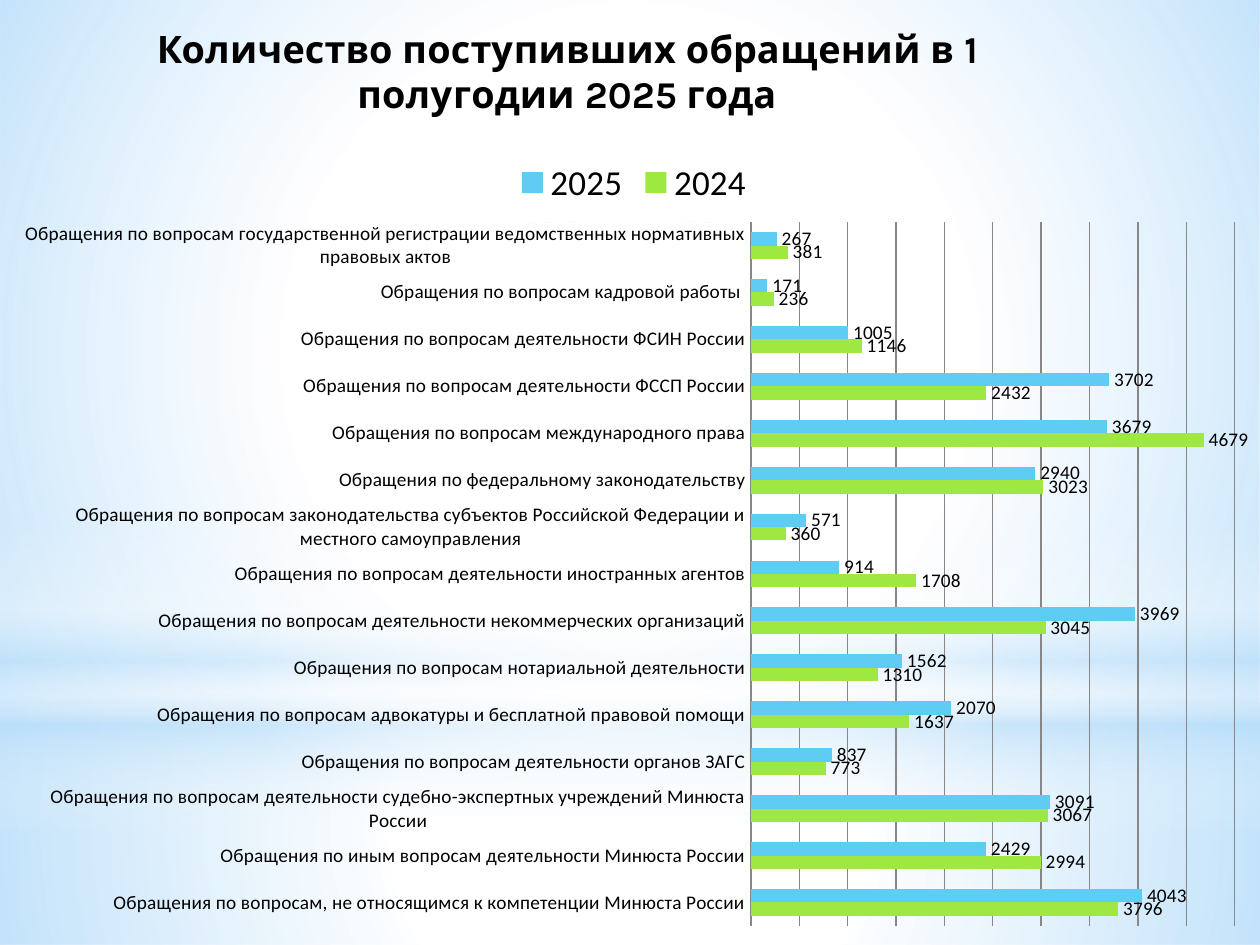
from lxml import etree
from pptx import Presentation
from pptx.chart.data import CategoryChartData as ChartData
from pptx.dml.color import RGBColor as Rgb
from pptx.enum.chart import XL_CHART_TYPE as ChartType
from pptx.enum.chart import XL_LABEL_POSITION as LabelPos
from pptx.enum.chart import XL_LEGEND_POSITION as LegendPos
from pptx.enum.chart import XL_TICK_MARK as TickMark
from pptx.enum.shapes import MSO_SHAPE as Shape
from pptx.oxml import parse_xml
from pptx.oxml.ns import nsdecls, qn
from pptx.util import Emu, Pt

SCALE = 914400 / 126
WIDTH, HEIGHT = 1260, 945
COLORS = {"white": "FFFFFF", "sky": "B4DCFA", "black": "000000",
          "grid": "878787", "2024": "9FE842", "2025": "5ECCF3"}
TITLE = "Количество поступивших обращений в 1 полугодии 2025 года"
YEARS = ("2024", "2025")
APPEALS = [
    ("Обращения по вопросам, не относящимся к компетенции Минюста России", 3796, 4043),
    ("Обращения по иным вопросам деятельности Минюста России", 2994, 2429),
    ("Обращения по вопросам деятельности судебно-экспертных учреждений Минюста России", 3067, 3091),
    ("Обращения по вопросам деятельности органов ЗАГС", 773, 837),
    ("Обращения по вопросам адвокатуры и бесплатной правовой помощи", 1637, 2070),
    ("Обращения по вопросам нотариальной деятельности", 1310, 1562),
    ("Обращения по вопросам деятельности некоммерческих организаций", 3045, 3969),
    ("Обращения по вопросам деятельности иностранных агентов", 1708, 914),
    ("Обращения по вопросам законодательства субъектов Российской Федерации "
     "и местного самоуправления", 360, 571),
    ("Обращения по федеральному законодательству", 3023, 2940),
    ("Обращения по вопросам международного права", 4679, 3679),
    ("Обращения по вопросам деятельности ФССП России", 2432, 3702),
    ("Обращения по вопросам деятельности ФСИН России", 1146, 1005),
    ("Обращения по вопросам кадровой работы ", 236, 171),
    ("Обращения по вопросам государственной регистрации ведомственных "
     "нормативных правовых актов", 381, 267),
]


def px(length):
    return Emu(round(length * SCALE))


def color(name):
    return Rgb.from_string(COLORS[name])


def style_font(font, size, name="Calibri", bold=False):
    font.size, font.name, font.bold = Pt(size), name, bold
    font.color.rgb = color("black")


def write(frame, text, **style):
    span = frame.paragraphs[0].add_run()
    span.text = text
    style_font(span.font, **style)


def place(parent, x, y, width=None, height=None):
    for old in parent.findall(qn("c:layout")):
        parent.remove(old)
    values = [("xMode", "edge"), ("yMode", "edge"),
              ("x", round(x / WIDTH, 3)), ("y", round(y / HEIGHT, 3))]
    if width:
        values.insert(0, ("layoutTarget", "inner"))
        values += [("w", round(width / WIDTH, 3)), ("h", round(height / HEIGHT, 3))]
    layout = parse_xml(f"<c:layout {nsdecls('c')}><c:manualLayout/></c:layout>")
    for tag, value in values:
        etree.SubElement(layout[0], qn(f"c:{tag}")).set("val", str(value))
    return layout


class SlideBuilder:
    def __init__(self, deck):
        self.page = deck.slides.add_slide(deck.slide_layouts[6])
        self.page.background.fill.solid()
        self.page.background.fill.fore_color.rgb = color("white")

    def glow(self, kind, x, y, width, height, stops, angle=None):
        shape = self.page.shapes.add_shape(kind, px(x), px(y), px(width), px(height))
        shape.shadow.inherit = False
        shape.line.fill.background()
        marks = "".join(
            f'<a:gs pos="{pos * 1000}"><a:srgbClr val="{COLORS[name]}">'
            f'<a:alpha val="{alpha * 1000}"/></a:srgbClr></a:gs>'
            for pos, name, alpha in stops)
        if angle is None:
            direction = ('<a:path path="circle"><a:fillToRect l="50000" t="50000" '
                         'r="50000" b="50000"/></a:path>')
        else:
            direction = f'<a:lin ang="{angle * 60000}" scaled="0"/>'
        shape.fill.background()
        properties = shape._element.spPr
        properties.replace(properties.find(qn("a:noFill")), parse_xml(
            f'<a:gradFill {nsdecls("a")} rotWithShape="1"><a:gsLst>{marks}</a:gsLst>'
            f'{direction}</a:gradFill>'))

    def bar_chart(self, x, y, width, height):
        data = ChartData()
        names, *columns = zip(*APPEALS)
        data.categories = names
        for year, values in zip(YEARS, columns):
            data.add_series(year, values)
        chart = self.page.shapes.add_chart(
            ChartType.BAR_CLUSTERED, px(x), px(y), px(width), px(height), data).chart
        style_font(chart.font, 18, "Karla")
        self.title(chart)
        self.legend(chart)
        self.axes(chart)
        self.bars(chart)

    def title(self, chart):
        chart.has_title = True
        write(chart.chart_title.text_frame, TITLE, size=21.6, name="Karla", bold=True)
        element = chart.chart_title._element
        layout = place(element, 150, 17)
        element.find(qn("c:tx")).addnext(layout)

    def legend(self, chart):
        chart.has_legend = True
        chart.legend.position = LegendPos.TOP
        chart.legend.include_in_layout = False
        style_font(chart.legend.font, 20)
        element = chart.legend._element
        layout = place(element, 510, 154)
        element.find(qn("c:legendPos")).addnext(layout)

    def axes(self, chart):
        names, values = chart.category_axis, chart.value_axis
        names.major_tick_mark = names.minor_tick_mark = TickMark.NONE
        style_font(names.tick_labels.font, 11)
        values.visible = False
        values.minimum_scale, values.maximum_scale, values.major_unit = 0, 5000, 500
        values.has_major_gridlines = True
        for line in (names.format.line, values.major_gridlines.format.line):
            line.color.rgb = color("grid")
            line.width = Pt(0.75)

    def bars(self, chart):
        plot = chart.plots[0]
        plot.gap_width = 150
        plot.vary_by_categories = False
        for series in plot.series:
            series.format.fill.solid()
            series.format.fill.fore_color.rgb = color(series.name)
            labels = series.data_labels
            labels.show_value = True
            labels.position = LabelPos.OUTSIDE_END
            style_font(labels.font, 11)
        area = plot._element.getparent()
        area.insert(0, place(area, 751, 222, 484, 704))


def main():
    deck = Presentation()
    deck.slide_width, deck.slide_height = px(WIDTH), px(HEIGHT)
    builder = SlideBuilder(deck)
    builder.glow(Shape.RECTANGLE, 0, 703, WIDTH, 242,
                 [(0, "white", 91), (37, "white", 76), (100, "sky", 79)])
    builder.glow(Shape.RECTANGLE, 0, 0, WIDTH, 703,
                 [(0, "white", 89), (48, "white", 62), (100, "sky", 79)])
    builder.glow(Shape.RECTANGLE, 0, 519, WIDTH, 315,
                 [(0, "white", 0), (29, "white", 30), (45, "sky", 40),
                  (55, "white", 26), (65, "sky", 60), (100, "white", 0)], angle=90)
    builder.glow(Shape.OVAL, 0, 221, WIDTH, 703,
                 [(0, "white", 100), (56, "white", 0)])
    builder.bar_chart(0, 0, WIDTH, HEIGHT)
    deck.save("out.pptx")


if __name__ == "__main__":
    main()
